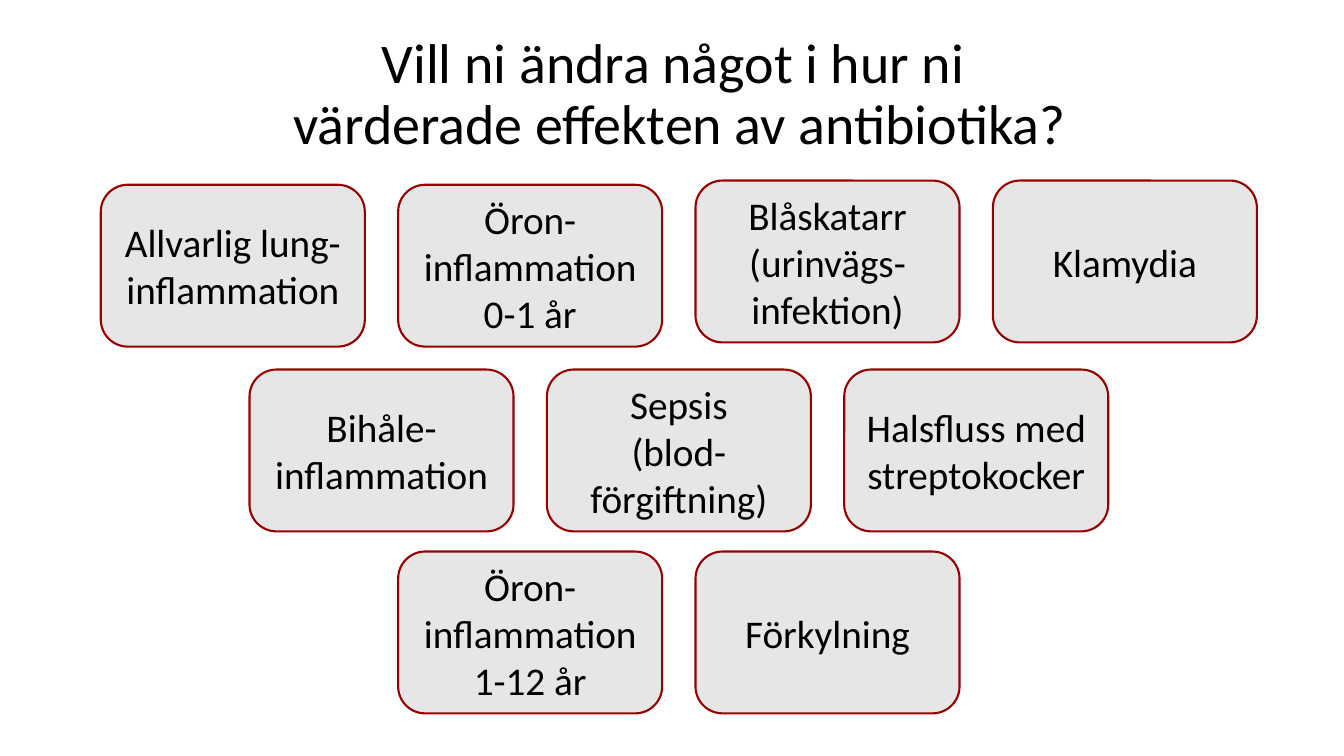
from pptx import Presentation
from pptx.dml.color import RGBColor
from pptx.enum.shapes import MSO_SHAPE
from pptx.enum.text import MSO_ANCHOR, MSO_AUTO_SIZE, PP_ALIGN
from pptx.util import Pt

ROUNDED = MSO_SHAPE.ROUNDED_RECTANGLE
MIDDLE = MSO_ANCHOR.MIDDLE
CENTER = PP_ALIGN.CENTER
NO_AUTOFIT = MSO_AUTO_SIZE.NONE

BLACK = RGBColor(0x00, 0x00, 0x00)
GREY = RGBColor(0xE6, 0xE6, 0xE6)
RED = RGBColor(0x99, 0x00, 0x00)

CARD_W, CARD_H = 188.6, 115.6
LEFT, PITCH = 72, 212.4

# Each row: cards as (top, text)
ROWS = [
    [(132, "Allvarlig lung-inflammation"),
     (132, "Öron-inflammation 0-1 år"),
     (129, "Blåskatarr\n(urinvägs-\ninfektion)"),
     (129, "Klamydia")],
    [(264, "Bihåle-\ninflammation"),
     (264, "Sepsis\n(blod-\nförgiftning)"),
     (264, "Halsfluss med\nstreptokocker")],
    [(394, "Öron-inflammation 1-12 år"),
     (394, "Förkylning")],
]


def write(tf, text, size):
    tf.word_wrap = True
    tf.auto_size = NO_AUTOFIT
    tf.vertical_anchor = MIDDLE
    p = tf.paragraphs[0]
    p.text = text
    p.alignment = CENTER
    p.font.name = "Calibri"
    p.font.size = Pt(size)
    p.font.color.rgb = BLACK
    return p


prs = Presentation()
prs.slide_width, prs.slide_height = Pt(960), Pt(540)
s = prs.slides.add_slide(prs.slide_layouts[5])

# Title
title = s.shapes.title
title.left, title.top, title.width, title.height = Pt(0), Pt(24.5), Pt(970.6), Pt(87.8)
p = write(title.text_frame, "Vill ni ändra något i hur ni \nvärderade effekten av antibiotika?", 40)
p.line_spacing = 0.9

# Cards, each row shifted half a step to the right
for row, cards in enumerate(ROWS):
    for col, (top, text) in enumerate(cards):
        left = LEFT + (col + row / 2) * PITCH
        card = s.shapes.add_shape(ROUNDED, Pt(left), Pt(top), Pt(CARD_W), Pt(CARD_H))
        card.shadow.inherit = False
        card.fill.solid()
        card.fill.fore_color.rgb = GREY
        card.line.color.rgb = RED
        card.line.width = Pt(1.5)
        write(card.text_frame, text, 28)

prs.save("out.pptx")
